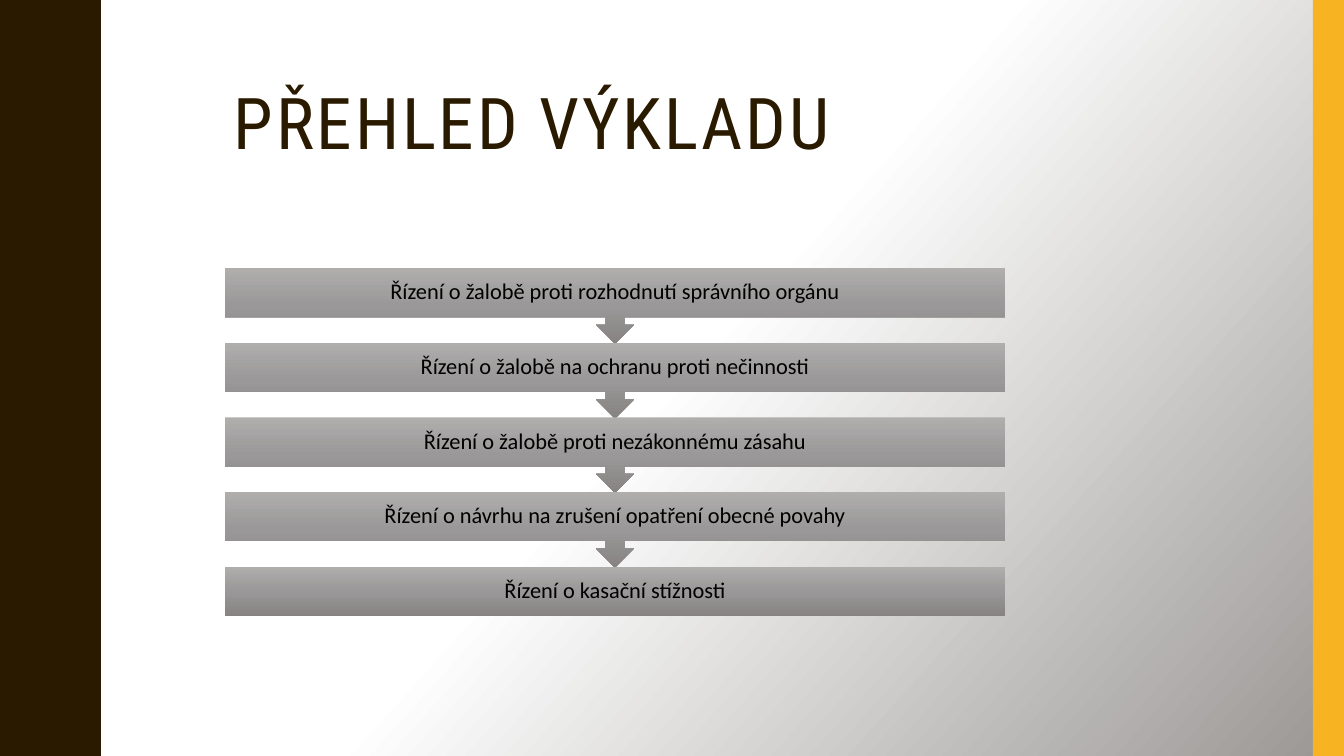
from copy import deepcopy

from pptx import Presentation
from pptx.dml.color import RGBColor
from pptx.enum.shapes import MSO_SHAPE
from pptx.enum.text import MSO_ANCHOR, PP_ALIGN
from pptx.oxml.ns import qn
from pptx.util import Inches, Pt

# Content
TITLE = "PŘEHLED VÝKLADU"
PROCEEDINGS = [
    "Řízení o žalobě proti rozhodnutí správního orgánu",
    "Řízení o žalobě na ochranu proti nečinnosti",
    "Řízení o žalobě proti nezákonnému zásahu",
    "Řízení o návrhu na zrušení opatření obecné povahy",
    "Řízení o kasační stížnosti",
]

# Colours
BROWN = RGBColor(0x2A, 0x1A, 0x00)
YELLOW = RGBColor(0xF8, 0xB3, 0x23)
WHITE = RGBColor(0xFF, 0xFF, 0xFF)
BLACK = RGBColor(0x00, 0x00, 0x00)
BACKDROP = [WHITE, WHITE, RGBColor(0x99, 0x96, 0x94)]
STEP_GREYS = [RGBColor(0xAF, 0xAE, 0xAD), RGBColor(0x9A, 0x98, 0x98),
              RGBColor(0x86, 0x83, 0x82)]

# Layout, in inches
SLIDE_W, SLIDE_H = 13.33, 7.5
STEP_LEFT, STEP_TOP, STEP_W = 2.23, 2.66, 7.74
STEP_PITCH, BOX_H, CALLOUT_H = 0.74, 0.49, 0.75
WAVE_PERIOD = 1.5
HALF_WAVE = [(0.78, 0), (0.78, 0.07), (0.79, 0.14), (0.8, 0.2), (0.81, 0.25),
             (0.83, 0.29), (0.85, 0.33), (0.87, 0.38), (0.89, 0.42),
             (0.91, 0.46), (0.93, 0.5), (0.95, 0.55), (0.96, 0.61),
             (0.97, 0.68), (0.97, 0.75)]


def set_gradient(fill, element, colors, clockwise_angle):
    """Three evenly spaced stops; element is the XML holding the fill."""
    fill.gradient()
    fill.gradient_angle = 360 - clockwise_angle
    stop_list = element.find(".//" + qn("a:gsLst"))
    stop_list.append(deepcopy(stop_list[-1]))
    for i, (stop, color) in enumerate(zip(fill.gradient_stops, colors)):
        stop.position = i / 2
        stop.color.rgb = color


def set_solid(shape, color):
    shape.shadow.inherit = False
    shape.fill.solid()
    shape.fill.fore_color.rgb = color
    shape.line.fill.background()


def add_wavy_edge(slide):
    wave = HALF_WAVE + [(x, WAVE_PERIOD - y) for x, y in HALF_WAVE[-2::-1]]
    points = [(x, y + n * WAVE_PERIOD)
              for n in range(round(SLIDE_H / WAVE_PERIOD)) for x, y in wave]
    builder = slide.shapes.build_freeform(0, 0, scale=Inches(1))
    builder.add_line_segments(points + [(0, SLIDE_H)], close=True)
    set_solid(builder.convert_to_shape(), BROWN)


def add_step(slide, index, wording):
    last = index == len(PROCEEDINGS) - 1
    kind = MSO_SHAPE.RECTANGLE if last else MSO_SHAPE.DOWN_ARROW_CALLOUT
    step = slide.shapes.add_shape(
        kind, Inches(STEP_LEFT), Inches(STEP_TOP + index * STEP_PITCH),
        Inches(STEP_W), Inches(BOX_H if last else CALLOUT_H))
    step.shadow.inherit = False
    step.line.fill.background()
    set_gradient(step.fill, step.element, STEP_GREYS, 90)
    frame = step.text_frame
    frame.word_wrap = True
    frame.vertical_anchor = MSO_ANCHOR.MIDDLE
    frame.margin_left = frame.margin_right = Inches(0.12)
    frame.margin_top = frame.margin_bottom = Inches(0.12)
    paragraph = frame.paragraphs[0]
    paragraph.text = wording
    paragraph.alignment = PP_ALIGN.CENTER
    paragraph.line_spacing = 0.9
    paragraph.font.name = "Calibri"
    paragraph.font.size = Pt(16)
    paragraph.font.color.rgb = BLACK


def add_title(slide):
    title = slide.shapes.title
    title.left, title.top = Inches(2.22), Inches(0.82)
    title.width, title.height = Inches(7.89), Inches(1.18)
    title.text_frame.vertical_anchor = MSO_ANCHOR.TOP
    title.text_frame.word_wrap = True
    paragraph = title.text_frame.paragraphs[0]
    paragraph.text = TITLE
    paragraph.alignment = PP_ALIGN.LEFT
    paragraph.line_spacing = 0.9
    paragraph.font.name = "Roboto Condensed"
    paragraph.font.size = Pt(51)
    paragraph.font.color.rgb = BROWN
    # Letter spacing of 2 pt
    paragraph.runs[0].font._element.set("spc", "200")


def main():
    deck = Presentation()
    deck.slide_width, deck.slide_height = Inches(SLIDE_W), Inches(SLIDE_H)
    slide = deck.slides.add_slide(deck.slide_layouts[5])

    # Background and side bands
    set_gradient(slide.background.fill, slide.element, BACKDROP, 42)
    add_wavy_edge(slide)
    band = slide.shapes.add_shape(MSO_SHAPE.RECTANGLE, Inches(13.02), 0,
                                  Inches(0.31), Inches(SLIDE_H))
    set_solid(band, YELLOW)

    # Title and chain of proceedings
    add_title(slide)
    for index, wording in enumerate(PROCEEDINGS):
        add_step(slide, index, wording)

    deck.save("out.pptx")


if __name__ == "__main__":
    main()
